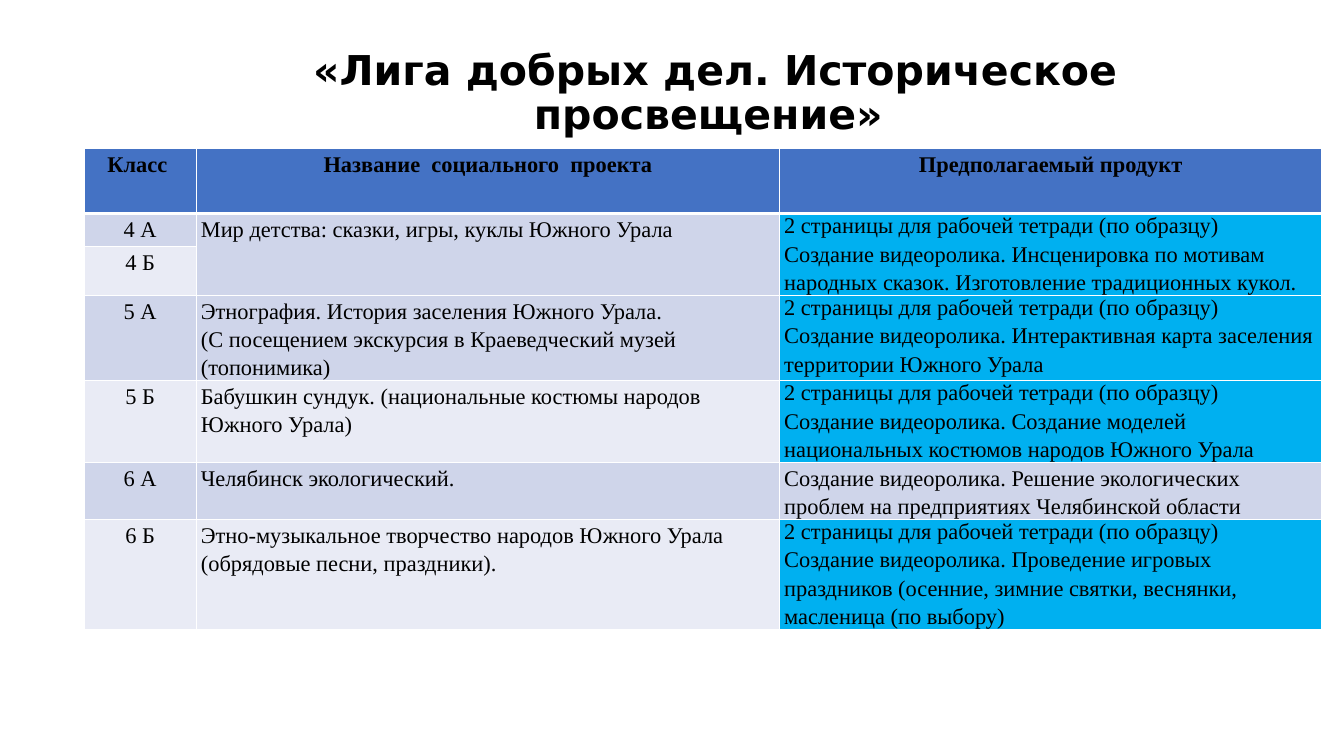
from lxml.etree import SubElement
from pptx import Presentation
from pptx.dml.color import RGBColor
from pptx.enum.text import MSO_ANCHOR, PP_ALIGN
from pptx.oxml.ns import qn
from pptx.util import Pt

COLORS = {
    "text": "000000", "line": "FFFFFF", "head": "4472C4",
    "odd": "CFD5EA", "even": "E9EBF5", "mark": "00B0F0",
}
COLS = [120.24, 624.96, 581.04]
ROWS = [69.84, 35.28, 45.36, 91.44, 68.4, 52.56, 64.08]
HEADS = ["Класс ", "Название  социального  проекта", "Предполагаемый продукт"]
PAGES = "2 страницы для рабочей тетради (по образцу)"
MOVIE = "Создание видеоролика. "
GAP = 10

# Class, project lines, space after the project, product lines
DATA = [
    ("4 А", ["Мир детства: сказки, игры, куклы Южного Урала"], 0,
     [PAGES, MOVIE + "Инсценировка по мотивам народных сказок. "
      "Изготовление традиционных кукол."]),
    ("4 Б", [], 0, []),
    ("5 А", ["Этнография. История заселения Южного Урала.",
             "(С посещением экскурсия в Краеведческий музей (топонимика)"], 0,
     [PAGES, MOVIE + "Интерактивная карта заселения территории Южного Урала"]),
    ("5 Б", ["Бабушкин сундук. (национальные костюмы народов Южного Урала)"], GAP,
     [PAGES, MOVIE + "Создание моделей национальных костюмов народов Южного Урала"]),
    ("6 А", ["Челябинск экологический."], GAP,
     [MOVIE + "Решение экологических проблем на предприятиях Челябинской области"]),
    ("6 Б", ["Этно-музыкальное творчество народов Южного Урала "
             "(обрядовые песни, праздники)."], 0,
     [PAGES, MOVIE + "Проведение игровых праздников (осенние, зимние святки, "
      "веснянки, масленица (по выбору)"]),
]


def style(para, face, size, bold, align, lead, after=0):
    para.alignment = align
    para.line_spacing = lead
    para.space_after = Pt(after)
    font = para.font
    font.name, font.size, font.bold = face, Pt(size), bold
    font.color.rgb = RGBColor.from_string(COLORS["text"])


def add_title(slide, text):
    box = slide.shapes.add_textbox(Pt(192.24), Pt(43.2), Pt(1149.12), Pt(115.92))
    frame = box.text_frame
    frame.word_wrap = True
    frame.vertical_anchor = MSO_ANCHOR.MIDDLE
    frame.text = text
    style(frame.paragraphs[0], "DejaVu Sans", 44, True, PP_ALIGN.CENTER, 0.9)


def paint(cell, color, top=1, base=1):
    # Borders come before the fill in the cell properties
    props = cell._tc.get_or_add_tcPr()
    for side, width in zip("LRTB", (1, 1, top, base)):
        line = SubElement(props, qn("a:ln" + side), w=str(Pt(width)))
        fill = SubElement(line, qn("a:solidFill"))
        SubElement(fill, qn("a:srgbClr"), val=COLORS["line"])
    cell.fill.solid()
    cell.fill.fore_color.rgb = RGBColor.from_string(COLORS[color])
    cell.margin_left = cell.margin_right = Pt(5)
    cell.margin_top = cell.margin_bottom = 0


def write(cell, lines, align=PP_ALIGN.LEFT, after=0, bold=False):
    frame = cell.text_frame
    for i, line in enumerate(lines):
        para = frame.add_paragraph() if i else frame.paragraphs[0]
        para.text = line
        lead = 1.0 if line == PAGES else 1.15
        style(para, "Times New Roman", 24, bold, align, lead, after)


def add_grid(slide):
    frame = slide.shapes.add_table(
        len(ROWS), len(COLS), Pt(90), Pt(159.12), Pt(sum(COLS)), Pt(sum(ROWS)))
    table = frame.table
    table.horz_banding = False
    for col, width in zip(table.columns, COLS):
        col.width = Pt(width)
    for row, height in zip(table.rows, ROWS):
        row.height = Pt(height)
    frame.height = Pt(553.68)

    # Header row
    for c, head in enumerate(HEADS):
        cell = table.cell(0, c)
        paint(cell, "head", base=3)
        write(cell, [head], PP_ALIGN.CENTER, bold=True)

    # Body rows
    for r, (name, topic, after, goal) in enumerate(DATA, 1):
        band = "odd" if r % 2 else "even"
        tint = "mark" if PAGES in goal else band
        for c, color in enumerate((band, band, tint)):
            paint(table.cell(r, c), color, top=3 if r == 1 else 1)
        write(table.cell(r, 0), [name], PP_ALIGN.CENTER, GAP)
        write(table.cell(r, 1), topic, after=after)
        write(table.cell(r, 2), goal, after=0 if PAGES in goal else GAP)

    # Both fourth-year classes share one project
    for c in (1, 2):
        table.cell(1, c).merge(table.cell(2, c))


def main():
    deck = Presentation()
    deck.slide_width, deck.slide_height = Pt(1440), Pt(810)
    slide = deck.slides.add_slide(deck.slide_layouts[6])
    add_grid(slide)
    add_title(slide, "«Лига добрых дел. Историческое просвещение» ")
    deck.save("out.pptx")


if __name__ == "__main__":
    main()
